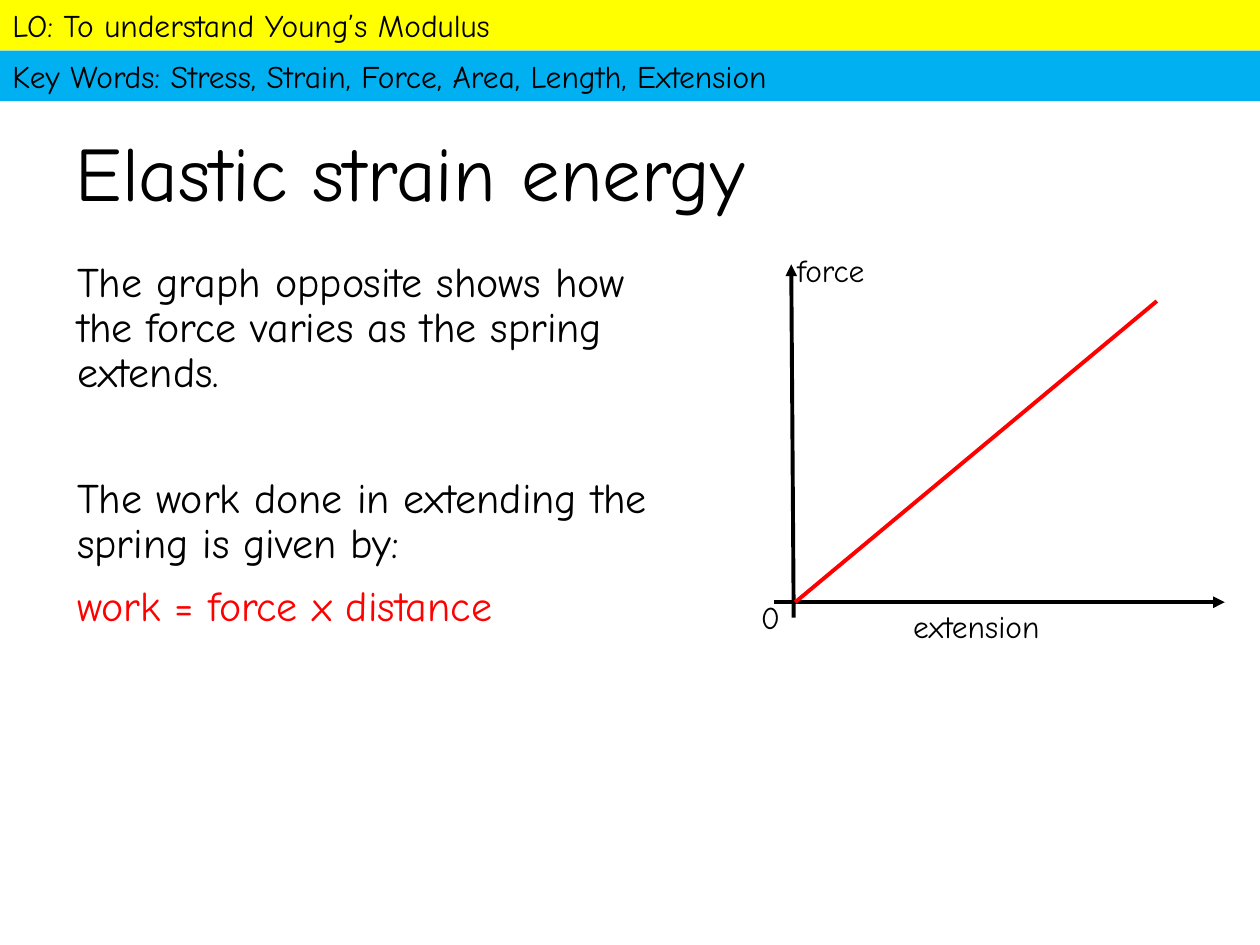
from lxml import etree
from pptx import Presentation
from pptx.dml.color import RGBColor
from pptx.enum.shapes import MSO_CONNECTOR, MSO_SHAPE
from pptx.enum.text import MSO_ANCHOR, MSO_AUTO_SIZE, PP_ALIGN
from pptx.oxml.ns import qn
from pptx.util import Cm, Pt

RECTANGLE = MSO_SHAPE.RECTANGLE
STRAIGHT = MSO_CONNECTOR.STRAIGHT
LEFT = PP_ALIGN.LEFT
TOP, MIDDLE = MSO_ANCHOR.TOP, MSO_ANCHOR.MIDDLE
NO_AUTOFIT = MSO_AUTO_SIZE.NONE

BLACK = RGBColor(0x00, 0x00, 0x00)
RED = RGBColor(0xFF, 0x00, 0x00)
YELLOW = RGBColor(0xFF, 0xFF, 0x00)
BLUE = RGBColor(0x00, 0xB0, 0xF0)

FONT = "Comic Neue"
PAGE_WIDTH, PAGE_HEIGHT = 25.4, 19.05
BANNER_HEIGHT = 1.02


def place(shape, left, top, width, height):
    shape.left, shape.top = Cm(left), Cm(top)
    shape.width, shape.height = Cm(width), Cm(height)


def style_para(para, size, color=BLACK):
    para.alignment = LEFT
    for span in para.runs:
        span.font.name = FONT
        span.font.size = Pt(size)
        span.font.color.rgb = color


def add_banner(page, row, text, fill):
    banner = page.shapes.add_shape(
        RECTANGLE, 0, Cm(row * BANNER_HEIGHT), Cm(PAGE_WIDTH), Cm(BANNER_HEIGHT))
    banner.shadow.inherit = False
    banner.fill.solid()
    banner.fill.fore_color.rgb = fill
    banner.line.fill.background()
    banner.text_frame.text = text
    banner.text_frame.vertical_anchor = MIDDLE
    style_para(banner.text_frame.paragraphs[0], 18)


def fill_title(page, text):
    title = page.shapes.title
    place(title, 1.27, 1.96, 22.86, 3.18)
    frame = title.text_frame
    frame.text = text
    frame.auto_size = NO_AUTOFIT
    frame.vertical_anchor = MIDDLE
    frame.paragraphs[0].line_spacing = 0.9
    style_para(frame.paragraphs[0], 44)


def fill_body(page, items):
    """Each item is a text, the points of space before it and its colour."""
    body = page.placeholders[1]
    place(body, 1.3, 5.13, 12.8, 11.61)
    frame = body.text_frame
    frame.text = "\n".join(text for text, _, _ in items)
    frame.auto_size = NO_AUTOFIT
    frame.vertical_anchor = TOP
    for para, (_, space, color) in zip(frame.paragraphs, items):
        properties = para._p.get_or_add_pPr()
        properties.set("marL", "0")
        properties.set("indent", "0")
        etree.SubElement(properties, qn("a:buNone"))
        para.line_spacing = 0.9
        para.space_before = Pt(space)
        style_para(para, 24, color)


def add_line(page, start, end, color=BLACK, arrow=False):
    line = page.shapes.add_connector(
        STRAIGHT, *(Cm(value) for value in (*start, *end)))
    line.line.color.rgb = color
    line.line.width = Pt(2.25)
    if arrow:
        etree.SubElement(line.line._get_or_add_ln(), qn("a:tailEnd"), type="triangle")
    etree.SubElement(line._element.spPr, qn("a:effectLst"))


def add_label(page, text, left, top, width, height):
    box = page.shapes.add_textbox(Cm(left), Cm(top), Cm(width), Cm(height))
    box.text_frame.word_wrap = True
    box.text_frame.text = text
    style_para(box.text_frame.paragraphs[0], 18)


def main():
    deck = Presentation()
    deck.slide_width, deck.slide_height = Cm(PAGE_WIDTH), Cm(PAGE_HEIGHT)
    page = deck.slides.add_slide(deck.slide_layouts[1])

    # Lesson banners
    add_banner(page, 0, "LO: To understand Young’s Modulus", YELLOW)
    add_banner(page, 1, "Key Words: Stress, Strain, Force, Area, Length, Extension", BLUE)

    # Title and explanation
    fill_title(page, "Elastic strain energy")
    fill_body(page, [
        ("The graph opposite shows how the force varies as the spring extends.", 0, BLACK),
        ("The work done in extending the spring is given by:", 46, BLACK),
        ("work = force x distance", 10, RED),
    ])

    # Force-extension graph
    axis_y = 12.14
    add_line(page, (16, 12.45), (15.95, 5.33), arrow=True)
    add_line(page, (15.6, axis_y), (24.69, axis_y), arrow=True)
    add_line(page, (16.03, axis_y), (23.32, 6.07), RED)
    add_label(page, "0", 15.09, 11.94, 1.17, 1.22)
    add_label(page, "force", 15.82, 4.93, 2.64, 0.99)
    add_label(page, "extension", 18.16, 12.12, 3.51, 1.02)

    deck.save("out.pptx")


if __name__ == "__main__":
    main()
